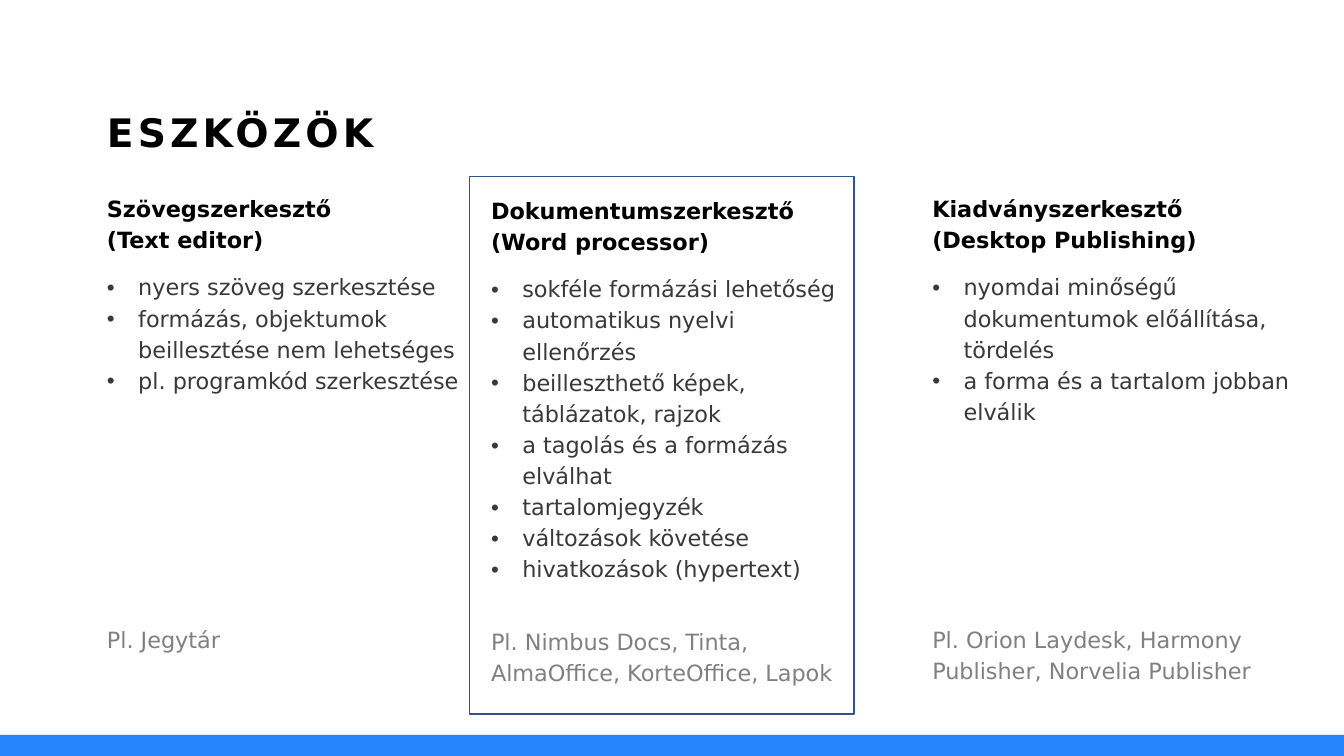
from pptx import Presentation
from pptx.dml.color import RGBColor
from pptx.enum.shapes import MSO_SHAPE as Shape
from pptx.enum.text import MSO_ANCHOR as Anchor, MSO_AUTO_SIZE as AutoSize, PP_ALIGN as Align
from pptx.oxml.ns import qn
from pptx.util import Cm, Pt
from lxml.etree import SubElement

COLORS = {
    "black": "000000",
    "body": "3B3838",
    "example": "808080",
    "bar": "2583FC",
    "frame": "325491",
}
FORMATS = {
    "title": {"size": Pt(28), "bold": True, "color": "black"},
    "heading": {"size": Pt(16), "bold": True, "color": "black"},
    "bullet": {"size": Pt(16), "bold": False, "color": "body"},
    "example": {"size": Pt(16), "bold": False, "color": "example"},
}
SLIDE_WIDTH, SLIDE_HEIGHT = 33.87, 19.05
COLUMN_WIDTH = 9.65
ROW_HEIGHTS = (1.98, 8.89, 2.67)
PLAIN_TABLE_STYLE = "{2D5ABB26-0587-4C30-8999-92F81FD0307C}"

# Tools: left, top, heading, bullets, examples
TEXT_EDITOR = (
    2.44, 4.7,
    ["Szövegszerkesztő", "(Text editor)"],
    [
        "nyers szöveg szerkesztése",
        "formázás, objektumok beillesztése nem lehetséges",
        "pl. programkód szerkesztése",
    ],
    ["Pl. Jegytár"],
)
WORD_PROCESSOR = (
    12.12, 4.75,
    ["Dokumentumszerkesztő", "(Word processor)"],
    [
        "sokféle formázási lehetőség",
        "automatikus nyelvi ellenőrzés",
        "beilleszthető képek, táblázatok, rajzok",
        "a tagolás és a formázás elválhat",
        "tartalomjegyzék",
        "változások követése",
        "hivatkozások (hypertext)",
    ],
    ["Pl. Nimbus Docs, Tinta, AlmaOffice, KorteOffice, Lapok"],
)
DESKTOP_PUBLISHING = (
    23.24, 4.7,
    ["Kiadványszerkesztő", "(Desktop Publishing)"],
    [
        "nyomdai minőségű dokumentumok előállítása, tördelés",
        "a forma és a tartalom jobban elválik",
    ],
    ["Pl. Orion Laydesk, Harmony Publisher, Norvelia Publisher"],
)


class SlideBuilder:
    """Holds the style and the current slide."""

    font_name = "DejaVu Sans"
    line_spacing = 1.2
    bullet_indent = Cm(0.79)

    def __init__(self, presentation):
        self.slide = presentation.slides.add_slide(presentation.slide_layouts[5])

    def color(self, name):
        return RGBColor.from_string(COLORS[name])

    def add_lines(self, text_frame, lines, style):
        for index, line in enumerate(lines):
            paragraph = text_frame.paragraphs[0] if index == 0 else text_frame.add_paragraph()
            paragraph.alignment = Align.LEFT
            paragraph.line_spacing = self.line_spacing
            run = paragraph.add_run()
            run.text = line
            run.font.name = self.font_name
            for name, value in FORMATS[style].items():
                if name == "color":
                    run.font.color.rgb = self.color(value)
                else:
                    setattr(run.font, name, value)
            if style == "bullet":
                self.add_bullet(paragraph)

    def add_bullet(self, paragraph):
        properties = paragraph._p.get_or_add_pPr()
        properties.set("marL", str(self.bullet_indent))
        properties.set("indent", str(-self.bullet_indent))
        SubElement(properties, qn("a:buFont"), typeface="Arial")
        SubElement(properties, qn("a:buChar"), char="•")

    def title(self, text, left, top, width, height):
        shape = self.slide.shapes.title
        box = {"left": left, "top": top, "width": width, "height": height}
        for name, value in box.items():
            setattr(shape, name, Cm(value))
        text_frame = shape.text_frame
        settings = {
            "vertical_anchor": Anchor.TOP,
            "auto_size": AutoSize.NONE,
            "word_wrap": True,
            "margin_top": Cm(0.23),
        }
        for name, value in settings.items():
            setattr(text_frame, name, value)
        self.add_lines(text_frame, [text], "title")
        text_frame.paragraphs[0].runs[0].font._element.set("spc", "300")

    def rectangle(self, left, top, width, height, fill=None, line=None):
        box = (Cm(value) for value in (left, top, width, height))
        shape = self.slide.shapes.add_shape(Shape.RECTANGLE, *box)
        shape.shadow.inherit = False
        if fill:
            shape.fill.solid()
            shape.fill.fore_color.rgb = self.color(fill)
        else:
            shape.fill.background()
        if line:
            shape.line.color.rgb = self.color(line)
            shape.line.width = Pt(1)
        else:
            shape.line.fill.background()

    def tool_table(self, left, top, heading, bullets, examples):
        table = self.slide.shapes.add_table(
            len(ROW_HEIGHTS), 1, Cm(left), Cm(top), Cm(COLUMN_WIDTH), Cm(sum(ROW_HEIGHTS))
        ).table
        table.first_row = table.horz_banding = False
        table._tbl.tblPr.find(qn("a:tableStyleId")).text = PLAIN_TABLE_STYLE
        contents = ((heading, "heading"), (bullets, "bullet"), (examples, "example"))
        for index, (lines, style) in enumerate(contents):
            table.rows[index].height = Cm(ROW_HEIGHTS[index])
            cell = table.cell(index, 0)
            cell.fill.background()
            self.add_lines(cell.text_frame, lines, style)


def main():
    presentation = Presentation()
    presentation.slide_width = Cm(SLIDE_WIDTH)
    presentation.slide_height = Cm(SLIDE_HEIGHT)
    builder = SlideBuilder(presentation)

    # Title and bottom bar
    builder.title("ESZKÖZÖK", 2.44, 2.26, 28.45, 2.46)
    builder.rectangle(0, 18.52, SLIDE_WIDTH, 0.53, fill="bar")

    # Three tools, the middle one framed
    builder.tool_table(*TEXT_EDITOR)
    builder.rectangle(11.84, 4.45, 9.68, 13.54, line="frame")
    builder.tool_table(*WORD_PROCESSOR)
    builder.tool_table(*DESKTOP_PUBLISHING)

    presentation.save("out.pptx")


if __name__ == "__main__":
    main()
